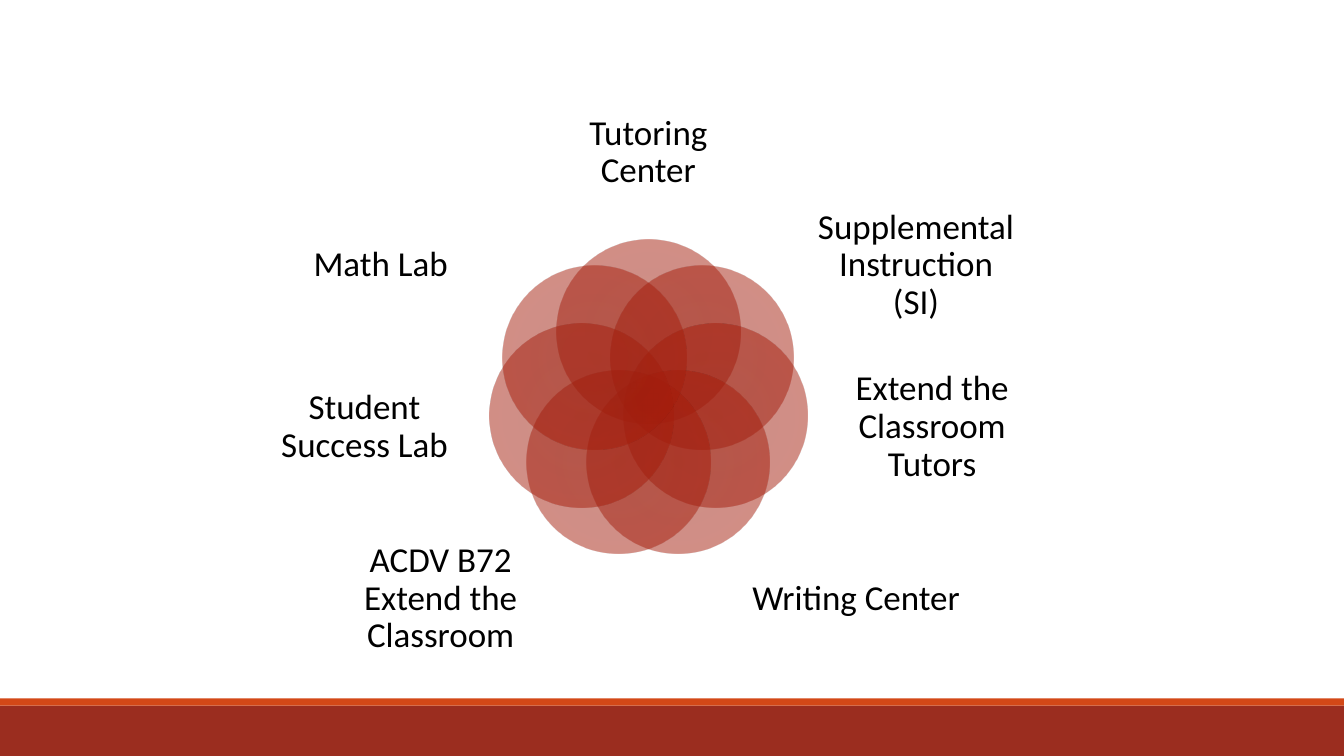
from math import cos, pi, sin

from lxml import etree
from pptx import Presentation
from pptx.dml.color import RGBColor
from pptx.enum.shapes import MSO_SHAPE
from pptx.enum.text import MSO_ANCHOR, PP_ALIGN
from pptx.oxml.ns import qn
from pptx.util import Inches, Pt

RECT, OVAL = MSO_SHAPE.RECTANGLE, MSO_SHAPE.OVAL
MIDDLE, CENTER = MSO_ANCHOR.MIDDLE, PP_ALIGN.CENTER

BRICK = RGBColor(0x9B, 0x2D, 0x1F)
ORANGE = RGBColor(0xD3, 0x48, 0x17)
BLACK = RGBColor(0, 0, 0)
PETAL = [
    (0, RGBColor(0xA2, 0x1D, 0x0C)),
    (34, RGBColor(0xA0, 0x1F, 0x0F)),
    (70, RGBColor(0xA6, 0x1D, 0x0C)),
    (100, RGBColor(0xA1, 0x28, 0x19)),
]

# Center of the flower, distance of the petals from it, petal diameter
MID_X, MID_Y, RING, SIZE = 6.43, 3.97, 0.68, 1.82

# Label boxes of the right half: left, top, width, height
UPPER = (8.1, 2.02, 1.97, 1.23)
SIDE = (8.28, 3.58, 1.93, 1.31)
LOWER = (7.45, 5.34, 2.08, 1.2)


def mirror(box):
    left, top, width, height = box
    return 2 * MID_X - left - width, top, width, height


# Clockwise from the top
LABELS = [
    ("Tutoring Center", (5.39, 0.96, 2.08, 1.11)),
    ("Supplemental Instruction (SI)", UPPER),
    ("Extend the Classroom Tutors", SIDE),
    ("Writing Center", LOWER),
    ("ACDV B72 Extend the Classroom", mirror(LOWER)),
    ("Student Success Lab", mirror(SIDE)),
    ("Math Lab", mirror(UPPER)),
]


def write(frame, text, size=25, font="Calibri", color=BLACK, align=CENTER):
    par = frame.paragraphs[0]
    par.alignment = align
    par.line_spacing = 0.9
    run = par.add_run()
    run.text = text
    run.font.size = Pt(size)
    run.font.name = font
    run.font.color.rgb = color


def glow(shape, stops, alpha=50):
    """Replace the solid fill by a see-through radial gradient."""
    grad = etree.Element(qn("a:gradFill"), rotWithShape="1")
    list_ = etree.SubElement(grad, qn("a:gsLst"))
    for pos, color in stops:
        stop = etree.SubElement(list_, qn("a:gs"), pos=str(pos * 1000))
        tint = etree.SubElement(stop, qn("a:srgbClr"), val=str(color))
        etree.SubElement(tint, qn("a:alpha"), val=str(alpha * 1000))
    round_ = etree.SubElement(grad, qn("a:path"), {"path": "circle"})
    edges = dict.fromkeys("ltrb", "100000")
    etree.SubElement(round_, qn("a:fillToRect"), edges)
    props = shape.element.spPr
    props.replace(props.find(qn("a:solidFill")), grad)


class Deck:
    def __init__(self):
        self.file = Presentation()
        self.file.slide_width = Inches(13.33)
        self.file.slide_height = Inches(7.5)
        self.slide = self.file.slides.add_slide(self.file.slide_layouts[6])

    def shape(self, kind, box, color):
        item = self.slide.shapes.add_shape(kind, *map(Inches, box))
        item.shadow.inherit = False
        item.fill.solid()
        item.fill.fore_color.rgb = color
        item.line.fill.background()
        return item

    def petal(self, angle):
        left = MID_X + RING * sin(angle) - SIZE / 2
        top = MID_Y - RING * cos(angle) - SIZE / 2
        glow(self.shape(OVAL, (left, top, SIZE, SIZE), BRICK), PETAL)

    def label(self, text, box):
        frame = self.slide.shapes.add_textbox(*map(Inches, box)).text_frame
        frame.word_wrap = True
        frame.vertical_anchor = MIDDLE
        frame.margin_left = frame.margin_right = 0
        frame.margin_top = frame.margin_bottom = 0
        write(frame, text)


def main():
    deck = Deck()
    # Footer bands
    deck.shape(RECT, (0, 7, 13.33, 0.5), BRICK)
    deck.shape(RECT, (0, 6.93, 13.33, 0.07), ORANGE)
    # Flower of overlapping circles with their labels
    for i, (text, box) in enumerate(LABELS):
        deck.petal(2 * pi * i / len(LABELS))
        deck.label(text, box)
    deck.file.save("out.pptx")


if __name__ == "__main__":
    main()
